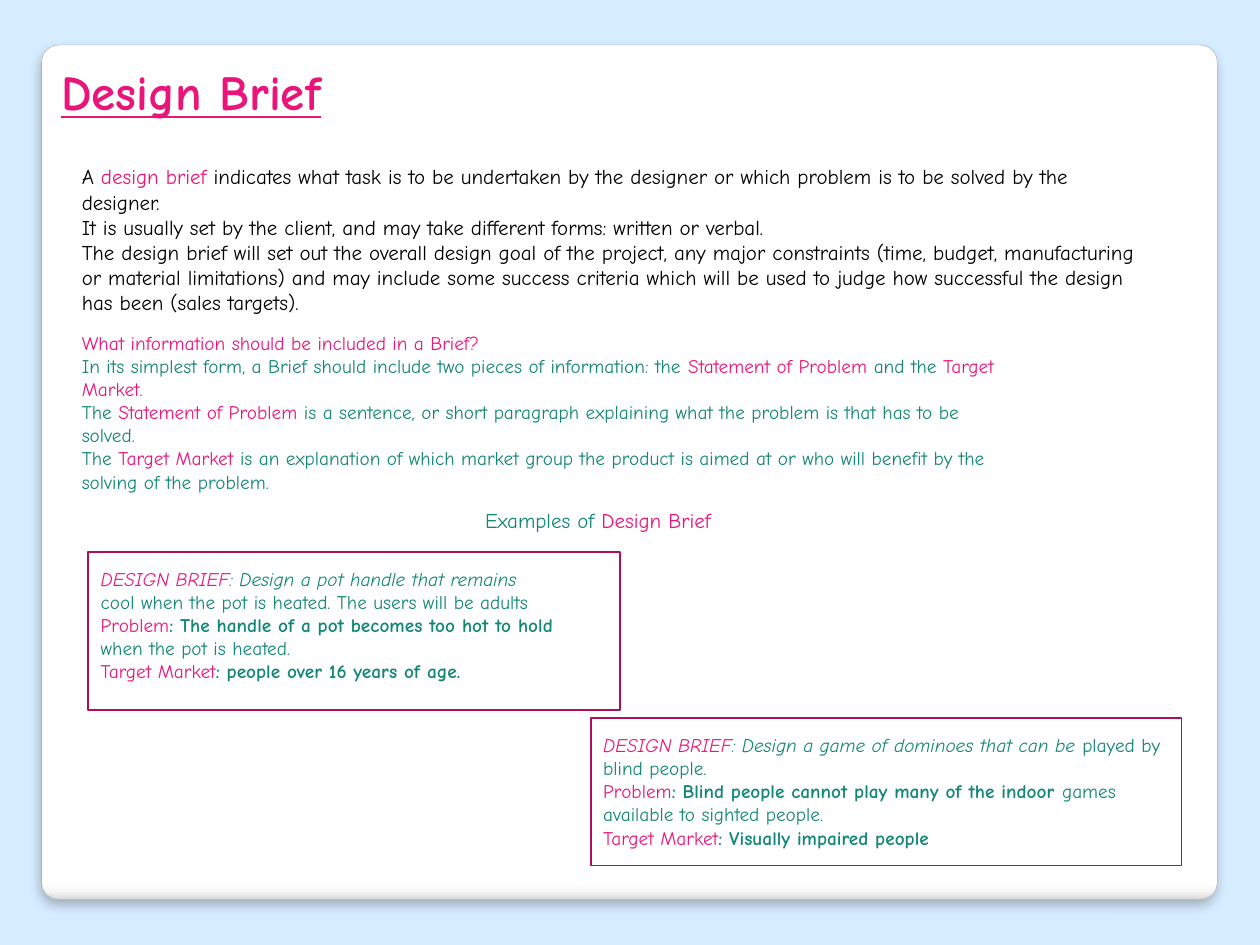
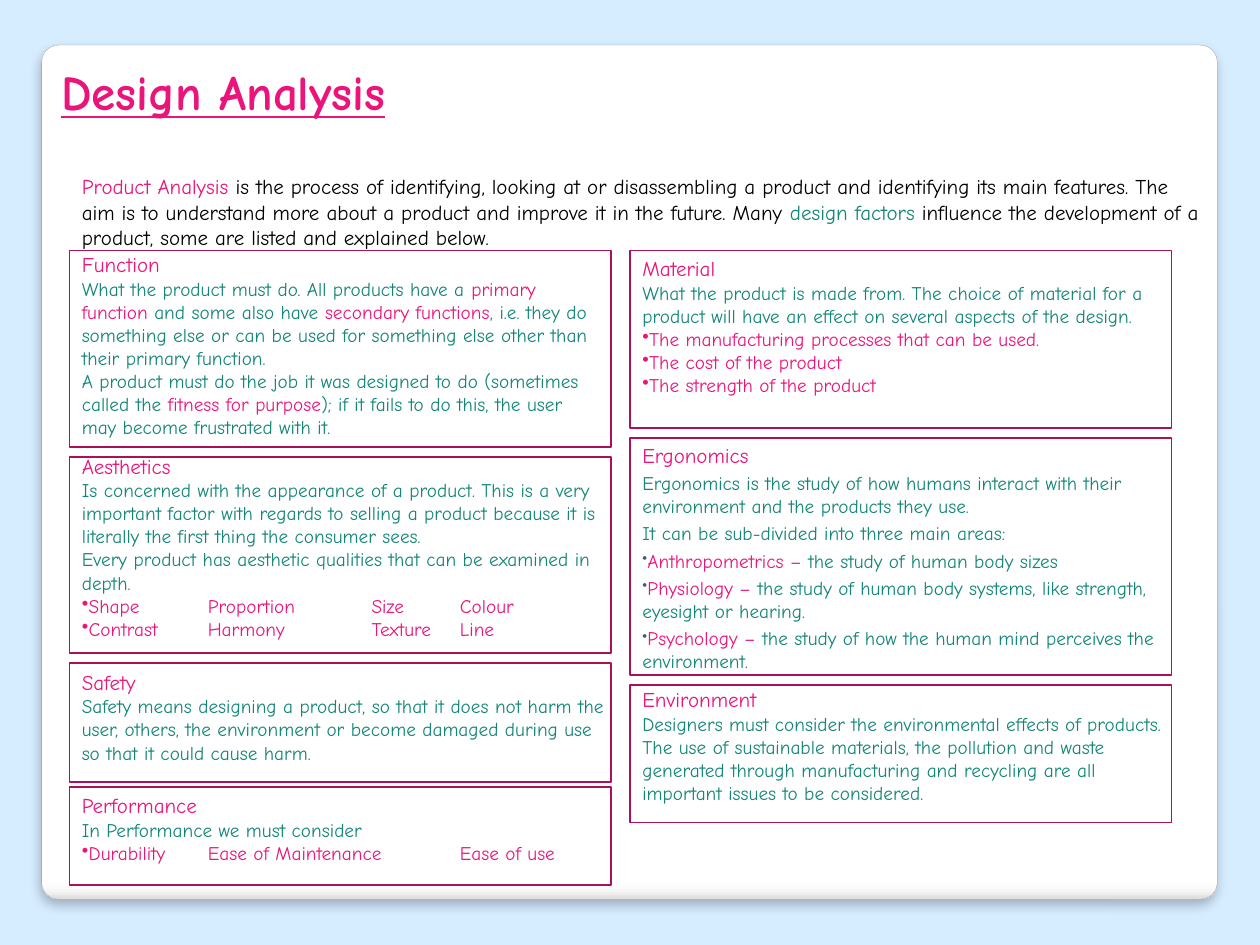
import pptx
import pptx.util
import pptx.dml.color
import pptx.enum.shapes
import pptx.enum.text
import pptx.oxml
import pptx.oxml.ns

Cm, Pt = pptx.util.Cm, pptx.util.Pt
RGB = pptx.dml.color.RGBColor
SHAPE = pptx.enum.shapes.MSO_SHAPE

# Shared look
FONT = "Comic Neue"
SKY = RGB(0xD6, 0xEC, 0xFF)
WHITE = RGB(0xFF, 0xFF, 0xFF)
BLACK = RGB(0x00, 0x00, 0x00)
PINK = RGB(0xEA, 0x15, 0x7A)
TEAL = RGB(0x13, 0x86, 0x77)
PLUM = RGB(0xAD, 0x10, 0x5A)
SLATE = RGB(0x4E, 0x5B, 0x6F)
CARD_EDGE = RGB(0xA4, 0xA4, 0xA4)
CARD_FADE = [(0, WHITE), (98, WHITE), (99, RGB(0xF7, 0xF7, 0xF7)), (100, RGB(0xDA, 0xDA, 0xDA))]
CARD = (0.84, 0.91, 23.7, 17.22)
TITLE = (0.99, 1.12, 21.44, 1.45)
TAB_STOPS = (2.54, 5.84, 7.62)

# Run styles: colour, bold, italic
STYLES = {
    "black": (BLACK, False, False),
    "pink": (PINK, False, False),
    "teal": (TEAL, False, False),
    "strong": (TEAL, True, False),
    "pink slant": (PINK, False, True),
    "teal slant": (TEAL, False, True),
}

# Content of the first slide; every paragraph is a list of (text, style) runs
BRIEF_MEANING = [
    [("A ", "black"), ("design brief ", "pink"),
     ("indicates what task is to be undertaken by the designer or which problem "
      "is to be solved by the designer.", "black")],
    [("It is usually set by the client, and may take different forms: written or verbal.", "black")],
    [("The design brief will set out the overall design goal of the project, any major constraints "
      "(time, budget, manufacturing or material limitations) and may include some success criteria "
      "which will be used to judge how successful the design has been (sales targets).", "black")],
]
BRIEF_CONTENTS = [
    [("What information should be included in a Brief?", "pink")],
    [("In its simplest form, a Brief should include two pieces of information: the ", "teal"),
     ("Statement of Problem ", "pink"), ("and the ", "teal"), ("Target", "pink")],
    [("Market.", "pink")],
    [("The ", "teal"), ("Statement of Problem ", "pink"),
     ("is a sentence, or short paragraph explaining what the problem is that has to be", "teal")],
    [("solved.", "teal")],
    [("The ", "teal"), ("Target Market ", "pink"),
     ("is an explanation of which market group the product is aimed at or who will benefit by the",
      "teal")],
    [("solving of the problem.", "teal")],
]
EXAMPLES_HEADING = [[("Examples of ", "teal"), ("Design Brief", "pink")]]
# Frame, text width, paragraphs
EXAMPLES = [
    ((1.78, 11.13, 10.72, 3.18), 12.7, [
        [("DESIGN BRIEF", "pink slant"), (": Design a pot handle that remains", "teal slant")],
        [("cool when the pot is heated. The users will be adults", "teal")],
        [("Problem", "pink"), (": The handle of a pot becomes too hot to hold", "strong")],
        [("when the pot is heated.", "teal")],
        [("Target Market", "pink"), (": people over 16 years of age.", "strong")],
    ]),
    ((11.91, 14.48, 11.91, 2.97), 12.29, [
        [("DESIGN BRIEF", "pink slant"),
         (": Design a game of dominoes that can be ", "teal slant"),
         ("played by blind people.", "teal")],
        [("Problem", "pink"), (": Blind people cannot play many of the indoor ", "strong"),
         ("games available to sighted people.", "teal")],
        [("Target Market", "pink"), (": Visually impaired people", "strong")],
    ]),
]

# Content of the second slide
ANALYSIS_MEANING = [
    [("Product Analysis ", "pink"),
     ("is the process of identifying, looking at or disassembling a product and identifying its main "
      "features. The aim is to understand more about a product and improve it in the future. Many ",
      "black"),
     ("design factors", "teal"),
     (" influence the development of a product, some are listed and explained below.", "black")],
]
FACTOR_TOP, FACTOR_WIDTH, FACTOR_GAP = 5.05, 10.92, 0.2
WIDE_TEXT = 11.13
# Columns by left edge; lift is how far the text starts above its frame
FACTORS = {
    1.4: [
        dict(heading="Function", height=3.96, lift=0.1, text_width=FACTOR_WIDTH, body=[
            [("What the product must do. All products have a ", "teal"), ("primary function ", "pink"),
             ("and some also have ", "teal"), ("secondary functions", "pink"),
             (", i.e. they do something else or can be used for something else other than "
              "their primary function.", "teal")],
            [("A product must do the job it was designed to do (sometimes called the ", "teal"),
             ("fitness for purpose", "pink"),
             ("); if it fails to do this, the user may become frustrated with it.", "teal")],
        ]),
        dict(heading="Aesthetics", height=3.96, lift=0.2, text_width=FACTOR_WIDTH, body=[
            [("Is concerned with the appearance of a product. This is a very important factor with "
              "regards to selling a product because it is literally the first thing the consumer "
              "sees.", "teal")],
            [("Every product has aesthetic qualities that can be examined in depth.", "teal")],
        ], bullets=[
            [("Shape\tProportion\tSize\tColour", "pink")],
            [("Contrast\tHarmony\tTexture\tLine", "pink")],
        ]),
        dict(heading="Safety", height=2.39, gap=0.1, body=[
            [("Safety means designing a product, so that it does not harm the user, others, the "
              "environment or become damaged during use so that it could cause harm.", "teal")],
        ]),
        dict(heading="Performance", height=1.98,
             body=[[("In Performance we must consider", "teal")]],
             bullets=[[("Durability\tEase of Maintenance\tEase of use", "pink")]]),
    ],
    12.7: [
        dict(heading="Material", height=3.58, lift=0.02, body=[
            [("What the product is made from. The choice of material for a product will have an "
              "effect on several aspects of the design.", "teal")],
        ], bullets=[
            [("The manufacturing processes that can be used.", "pink")],
            [("The cost of the product", "pink")],
            [("The strength of the product", "pink")],
        ]),
        dict(heading="Ergonomics", height=4.78, lift=0.04, space=2.3, small_bullets=True, body=[
            [("Ergonomics is the study of how humans interact with their environment and the "
              "products they use.", "teal")],
            [("It can be sub-divided into three main areas:", "teal")],
        ], bullets=[
            [("Anthropometrics – ", "pink"), ("the study of human body sizes", "teal")],
            [("Physiology – ", "pink"),
             ("the study of human body systems, like strength, eyesight or hearing.", "teal")],
            [("Psychology – ", "pink"),
             ("the study of how the human mind perceives the environment.", "teal")],
        ]),
        dict(heading="Environment", height=2.77, lift=0.09, body=[
            [("Designers must consider the environmental effects of products. The use of sustainable "
              "materials, the pollution and waste generated through manufacturing and recycling are "
              "all important issues to be considered.", "teal")],
        ]),
    ],
}


def xml(markup):
    return pptx.oxml.parse_xml(markup.replace(">", f" {pptx.oxml.ns.nsdecls('a')}>", 1))


def add_bullet(paragraph, small):
    """Bullet without indent, with tab stops for the word grids."""
    props = paragraph._p.get_or_add_pPr()
    props.set("marL", "0")
    props.set("indent", "0")
    if small:
        props.append(xml(f'<a:buClr><a:srgbClr val="{SLATE}"/></a:buClr>'))
        props.append(xml('<a:buSzPct val="75000"></a:buSzPct>'))
    props.append(xml('<a:buChar char="•"></a:buChar>'))
    stops = "".join(f'<a:tab pos="{Cm(stop)}" algn="l"/>' for stop in TAB_STOPS)
    props.append(xml(f"<a:tabLst>{stops}</a:tabLst>"))


def write(slide, box, paragraphs, size=11, first_size=None, bullets=(), space=0,
          small_bullets=False, wrap=True, bold=False, underline=False):
    frame = slide.shapes.add_textbox(*map(Cm, box)).text_frame
    frame.word_wrap = wrap
    frame.auto_size = pptx.enum.text.MSO_AUTO_SIZE.NONE
    for index, runs in enumerate([*paragraphs, *bullets]):
        paragraph = frame.add_paragraph() if index else frame.paragraphs[0]
        paragraph.space_before = Pt(space if index else 0)
        if index >= len(paragraphs):
            add_bullet(paragraph, small_bullets)
        for text, style in runs:
            run = paragraph.add_run()
            run.text = text
            font = run.font
            font.name = FONT
            font.size = Pt(first_size if first_size and not index else size)
            font.color.rgb, strong, font.italic = STYLES[style]
            font.bold = bold or strong
            font.underline = underline


def add_frame(slide, box):
    frame = slide.shapes.add_shape(SHAPE.RECTANGLE, *map(Cm, box))
    frame.shadow.inherit = False
    frame.fill.background()
    frame.line.color.rgb = PLUM
    frame.line.width = Pt(1)


def add_card(slide):
    card = slide.shapes.add_shape(SHAPE.ROUNDED_RECTANGLE, *map(Cm, CARD))
    card.adjustments[0] = 0.02
    card.line.color.rgb = CARD_EDGE
    card.line.width = Pt(0.16)
    # Fade at the lower edge
    card.fill.gradient()
    fade = card._element.spPr.find(pptx.oxml.ns.qn("a:gradFill"))
    stops = "".join(f'<a:gs pos="{pos * 1000}"><a:srgbClr val="{colour}"/></a:gs>'
                    for pos, colour in CARD_FADE)
    fade.getparent().replace(fade, xml(
        f'<a:gradFill><a:gsLst>{stops}</a:gsLst><a:lin ang="5400000" scaled="0"/></a:gradFill>'))
    # Soft shadow below
    card.shadow.inherit = False
    effects = card._element.spPr.find(pptx.oxml.ns.qn("a:effectLst"))
    effects.append(xml(
        f'<a:outerShdw blurRad="{Pt(6)}" dist="{Pt(4)}" dir="5400000" algn="t" rotWithShape="0">'
        f'<a:srgbClr val="{BLACK}"><a:alpha val="25000"/></a:srgbClr></a:outerShdw>'))


def add_page(deck, title):
    slide = deck.slides.add_slide(deck.slide_layouts[6])
    add_card(slide)
    write(slide, TITLE, [[(title, "pink")]], size=28, bold=True, underline=True)
    return slide


def build_brief(deck):
    slide = add_page(deck, "Design Brief")
    write(slide, (1.4, 3.18, 22.02, 3.33), BRIEF_MEANING, size=12)
    write(slide, (1.4, 6.55, 21.82, 3.56), BRIEF_CONTENTS)
    write(slide, (9.53, 10.11, 5.59, 0.76), EXAMPLES_HEADING, size=12, wrap=False)
    for frame, text_width, paragraphs in EXAMPLES:
        left, top, _, _ = frame
        write(slide, (left, top + 0.18, text_width, 2.62), paragraphs)
        add_frame(slide, frame)


def build_analysis(deck):
    slide = add_page(deck, "Design Analysis")
    write(slide, (1.4, 3.38, 23.11, 1.8), ANALYSIS_MEANING, size=12)
    for left, factors in FACTORS.items():
        top = FACTOR_TOP
        for factor in factors:
            height = factor["height"]
            text_box = (left, top - factor.get("lift", 0), factor.get("text_width", WIDE_TEXT), height)
            write(slide, text_box, [[(factor["heading"], "pink")], *factor["body"]], first_size=12,
                  bullets=factor.get("bullets", ()), space=factor.get("space", 0),
                  small_bullets=factor.get("small_bullets", False))
            add_frame(slide, (left, top, FACTOR_WIDTH, height))
            top += height + factor.get("gap", FACTOR_GAP)


def main():
    deck = pptx.Presentation()
    deck.slide_width, deck.slide_height = Cm(25.4), Cm(19.05)
    backdrop = deck.slide_master.background.fill
    backdrop.solid()
    backdrop.fore_color.rgb = SKY
    build_brief(deck)
    build_analysis(deck)
    deck.save("out.pptx")


if __name__ == "__main__":
    main()
